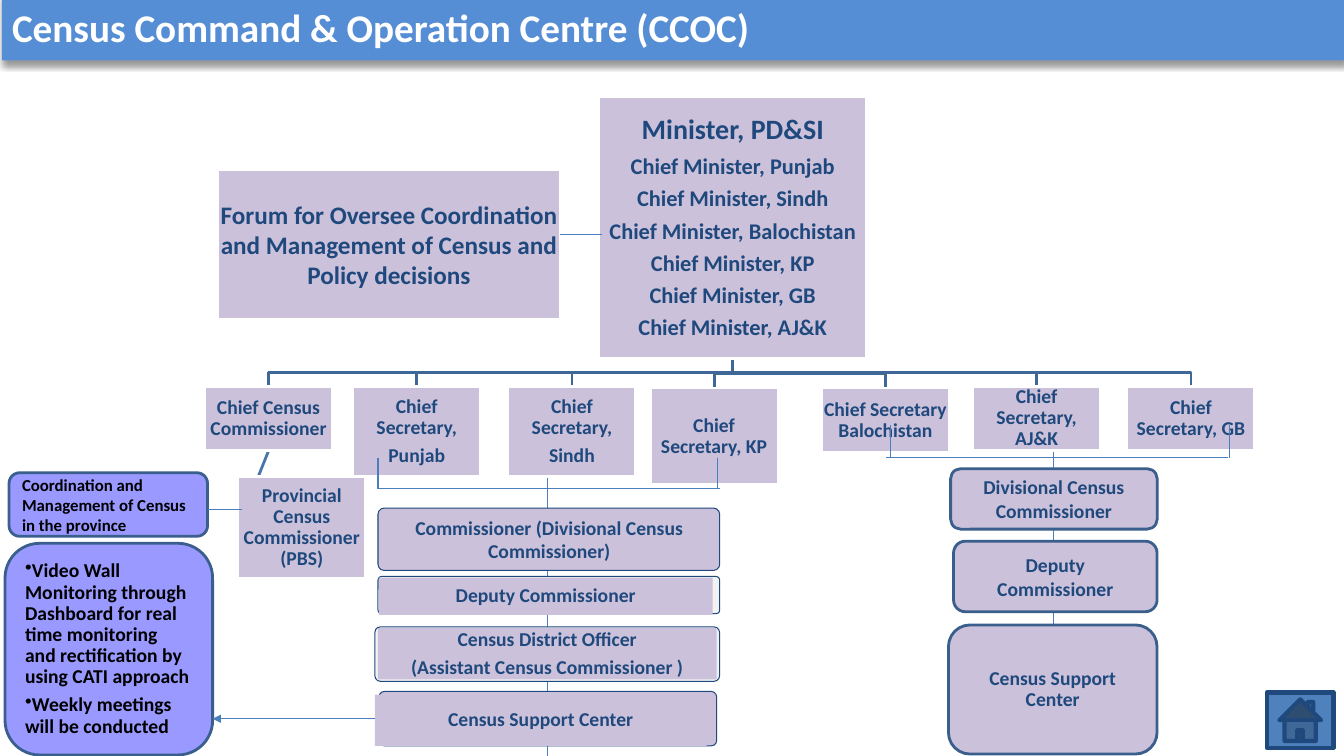
from pptx import Presentation
from pptx import util as u
from pptx.dml.color import RGBColor
from pptx.enum import shapes, text
from pptx.oxml.ns import qn
from lxml import etree
from dataclasses import dataclass


@dataclass(frozen=True)
class Theme:
    font: str = "Calibri"
    banner: str = "558ED5"
    white: str = "FFFFFF"
    lilac: str = "CCC1DA"
    pale: str = "F2F2F2"
    violet: str = "9999FF"
    black: str = "000000"
    navy: str = "1F497D"
    border: str = "3A5F8C"
    branch: str = "3F6797"
    slant: str = "4875AC"
    link: str = "4B7EBC"
    button: str = "4F81BD"
    title: int = 28
    lead: int = 20
    forum: int = 18
    member: int = 16
    body: int = 14
    small: int = 12


T = Theme()

# Content: all frames are (left, top, width, height) in points
TITLE = "Census Command & Operation Centre (CCOC)"
FORUM = "Forum for Oversee Coordination and Management of Census and Policy decisions"
FORUM_FRAME = (155.5, 121, 244.8, 107.3)
MINISTERS = ["Minister, PD&SI"] + [
    f"Chief Minister, {area}"
    for area in ("Punjab", "Sindh", "Balochistan", "KP", "GB", "AJ&K")]
MINISTERS_FRAME = (427.7, 69.1, 191.5, 187.2)
OFFICE_WIDTH = 91.4
OFFICES = [  # lines, left, top, height
    (["Chief Census Commissioner"], 146.2, 275.8, 46.1),
    (["Chief Secretary,", "Punjab"], 252, 275.8, 64.8),
    (["Chief Secretary,", "Sindh"], 362.9, 275.8, 64.8),
    (["Chief Secretary, KP"], 464.4, 277.2, 69.1),
    (["Chief Secretary Balochistan"], 586.8, 277.2, 46.1),
    (["Chief Secretary, AJ&K"], 694.8, 275.8, 46.1),
    (["Chief Secretary, GB"], 805, 275.8, 46.1),
]
PROVINCIAL = (["Provincial Census Commissioner (PBS)"], 169.9, 340.6, 72.7)
PROVINCE_CHAIN = [  # lines, outline frame, panel frame, outline fill, tight spacing
    (["Commissioner (Divisional Census Commissioner)"],
     (270, 362.9, 244.1, 44.6), (272.9, 364.3, 239, 41.8), T.lilac, False),
    (["Deputy Commissioner"],
     (270, 411.8, 244.1, 26.6), (270.7, 412.6, 238.3, 26.6), T.pale, True),
    (["Census District Officer", "(Assistant Census Commissioner )"],
     (267.8, 447.8, 246.2, 38.9), (270, 448.6, 241.9, 36.7), T.pale, True),
    (["Census Support Center"],
     (270.7, 493.9, 241.2, 38.9), (267.8, 496.1, 236.9, 36.7), T.lilac, True),
]
REGION_CHAIN = [  # text, frame, tight spacing
    ("Divisional Census Commissioner", (679, 334.8, 147.6, 43.2), False),
    ("Deputy Commissioner", (681.1, 386.6, 145.4, 50.4), False),
    ("Census Support Center", (677.5, 446.4, 149, 92.2), True),
]
COORDINATION = "Coordination and Management of Census in the province"
MONITORING = [
    "Video Wall Monitoring through Dashboard for real time monitoring "
    "and rectification by using CATI approach",
    "Weekly meetings will be conducted",
]
SPINES = [(752.4, 303.8, 538.6), (391, 326.9, 540)]  # x, top, bottom
BUSES = [(270, 514.1, 326.9, 349.2), (633, 877, 303.8, 326.9)]  # x1, x2, top, y
BUS_DROPS = [(270, 512.6), (635.8, 878.4)]

deck = Presentation()
deck.slide_width, deck.slide_height = u.Pt(960), u.Pt(540)
page = deck.slides.add_slide(deck.slide_layouts[5])
RECT = shapes.MSO_SHAPE.RECTANGLE
ROUND = shapes.MSO_SHAPE.ROUNDED_RECTANGLE


def rgb(value):
    return RGBColor.from_string(value)


def write(box, lines, sizes, color=T.navy, inset=(7.2, 3.6), centred=True,
          tight=True, bullets=False):
    frame = box.text_frame
    frame.word_wrap = True
    frame.auto_size = text.MSO_AUTO_SIZE.NONE
    frame.vertical_anchor = text.MSO_ANCHOR.MIDDLE
    frame.margin_left = frame.margin_right = u.Pt(inset[0])
    frame.margin_top = frame.margin_bottom = u.Pt(inset[1])
    frame.text = "\n".join(lines)
    for i, para in enumerate(frame.paragraphs):
        size = sizes[min(i, len(sizes) - 1)]
        para.alignment = text.PP_ALIGN.CENTER if centred else text.PP_ALIGN.LEFT
        if tight:
            para.line_spacing = 0.9
            para.space_after = u.Pt(round(0.35 * size, 1))
        if bullets:
            props = para._p.get_or_add_pPr()
            props.set("marL", "0")
            props.set("indent", str(-u.Pt(13.5)))
            etree.SubElement(props, qn("a:buChar")).set("char", "•")
        for span in para.runs:
            span.font.name, span.font.size = T.font, u.Pt(size)
            span.font.bold = True
            span.font.color.rgb = rgb(color)


def add_box(kind, frame, fill, line=None, width=2, corner=None):
    box = page.shapes.add_shape(kind, *(u.Pt(v) for v in frame))
    box.shadow.inherit = False
    box.fill.solid()
    box.fill.fore_color.rgb = rgb(fill)
    if line:
        box.line.color.rgb = rgb(line)
        box.line.width = u.Pt(width)
    else:
        box.line.fill.background()
    if corner:
        box.adjustments[0] = corner
    return box


def add_line(x1, y1, x2, y2, color=T.link, width=0.75):
    line = page.shapes.add_connector(
        shapes.MSO_CONNECTOR.STRAIGHT, *(u.Pt(v) for v in (x1, y1, x2, y2)))
    line.line.color.rgb = rgb(color)
    line.line.width = u.Pt(width)
    etree.SubElement(line._element.spPr, qn("a:effectLst"))
    return line


def add_bus(bus, drops):
    left, right, top, y = bus
    add_line(left, y, right, y)
    for x in drops:
        add_line(x, top, x, y)


def add_office(lines, left, top, height):
    box = add_box(RECT, (left, top, OFFICE_WIDTH, height), T.lilac, T.white)
    write(box, lines, [T.body], inset=(0.7, 0.7))
    return box


# Title banner with a soft shadow below
title = page.shapes.title
title.left, title.top, title.width, title.height = (
    u.Pt(v) for v in (1.4, -5, 960, 48.2))
title.fill.solid()
title.fill.fore_color.rgb = rgb(T.banner)
write(title, [TITLE], [T.title], T.white, centred=False, tight=False)
effects = etree.SubElement(title._element.spPr, qn("a:effectLst"))
shadow = etree.SubElement(effects, qn("a:outerShdw"), blurRad=str(u.Pt(4)),
                          dist=str(u.Pt(4)), dir="5400000", rotWithShape="0")
shade = etree.SubElement(shadow, qn("a:srgbClr"), val=T.black)
etree.SubElement(shade, qn("a:alpha"), val="40000")

# Spines behind the chains, and the home button
for x, top, bottom in SPINES:
    add_line(x, top, x, bottom)
add_box(shapes.MSO_SHAPE.ACTION_BUTTON_HOME, (905, 494.6, 47.5, 39.6),
        T.button, T.navy, 3)

# Elbow branches from the ministers to each office
stem_x = MINISTERS_FRAME[0] + MINISTERS_FRAME[2] / 2
stem_y = MINISTERS_FRAME[1] + MINISTERS_FRAME[3]
for _, left, top, _ in reversed(OFFICES):
    end_x, bend_y = left + OFFICE_WIDTH / 2, (stem_y + top) / 2
    points = [(stem_x, stem_y), (stem_x, bend_y), (end_x, bend_y), (end_x, top)]
    corners = [(u.Pt(x), u.Pt(y)) for x, y in points]
    builder = page.shapes.build_freeform(*corners[0])
    builder.add_line_segments(corners[1:], close=False)
    branch = builder.convert_to_shape()
    branch.shadow.inherit = False
    branch.fill.background()
    branch.line.color.rgb = rgb(T.branch)
    branch.line.width = u.Pt(2)
slant = add_line(191.9, 321.9, 169.9, 377, T.slant, 2)

# Forum, ministers and offices
forum = add_box(RECT, FORUM_FRAME, T.lilac, T.white)
write(forum, [FORUM], [T.forum], inset=(0.7, 0.7), tight=False)
ministers = add_box(RECT, MINISTERS_FRAME, T.lilac, T.white)
write(ministers, MINISTERS, [T.lead, T.member], inset=(0.7, 0.7))
offices = [add_office(*office) for office in OFFICES]
slant.begin_connect(offices[0], 2)
slant.end_connect(add_office(*PROVINCIAL), 1)

# Province chain
add_bus(BUSES[0], BUS_DROPS[0])
for lines, outline, panel, fill, tight in PROVINCE_CHAIN:
    add_box(ROUND, outline, fill, T.navy, 0.75, corner=0.1)
    write(add_box(RECT, panel, T.lilac), lines, [T.body], inset=(4.3, 4.3),
          tight=tight)

# Coordination and monitoring notes
note = add_box(ROUND, (6.5, 337.7, 141.8, 45.4), T.violet, T.border)
write(note, [COORDINATION], [T.small], T.black, centred=False, tight=False)
note = add_box(ROUND, (3.6, 388.1, 148.3, 151.2), T.violet, T.border)
write(note, MONITORING, [T.body], T.black, centred=False, bullets=True)
arrow = add_line(268, 513.4, 151.9, 513.4)
etree.SubElement(arrow.line._get_or_add_ln(), qn("a:tailEnd"), type="triangle")

# Region chain
add_bus(BUSES[1], BUS_DROPS[1])
for label, frame, tight in REGION_CHAIN:
    write(add_box(ROUND, frame, T.lilac, T.border), [label], [T.body], tight=tight)

# Side links
add_line(400.3, 167.8, 429.8, 167.8)
add_line(148.3, 363.6, 172.8, 363.6)

deck.save("out.pptx")
